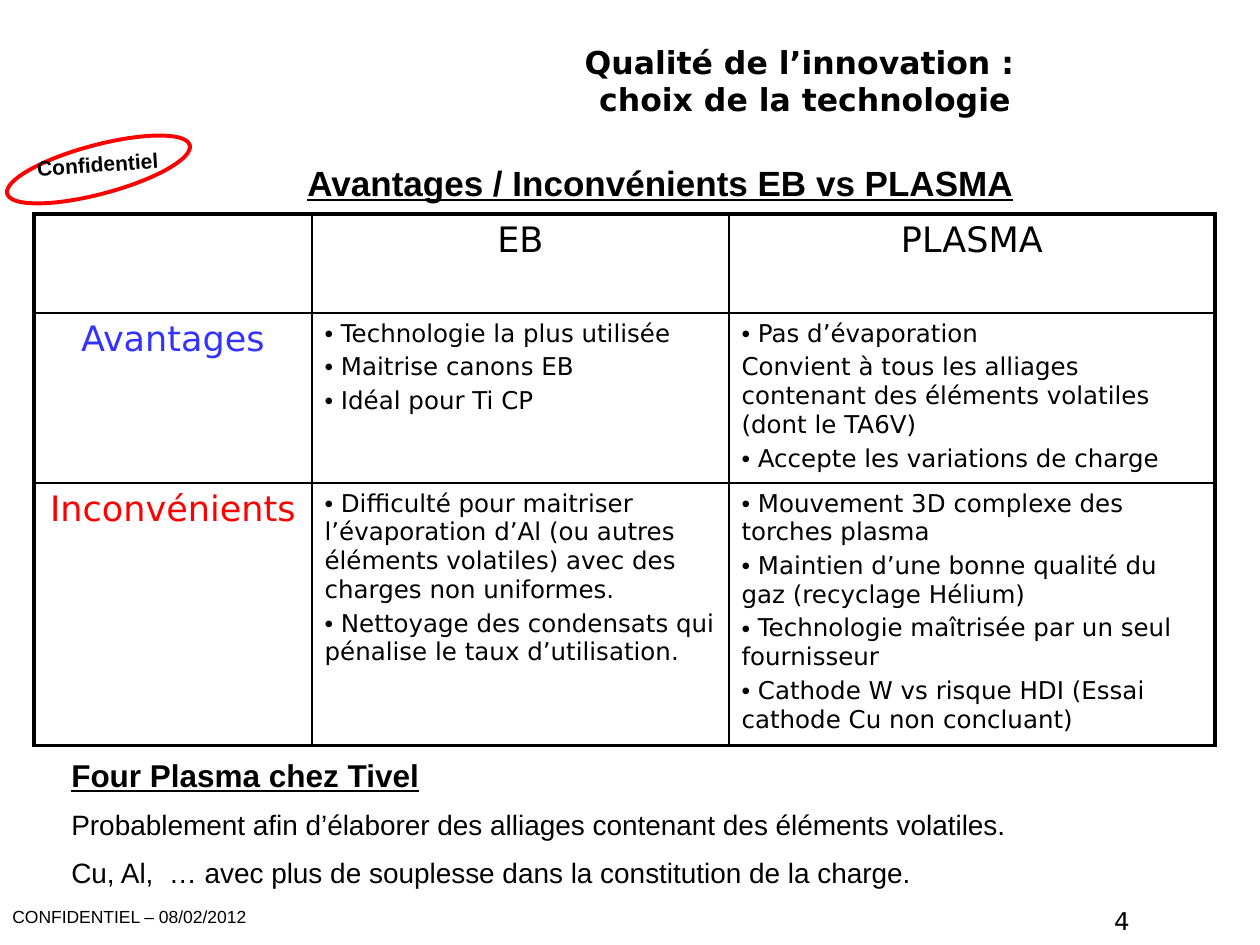
from lxml import etree
from pptx import Presentation
from pptx.dml.color import RGBColor
from pptx.enum import shapes, text
from pptx.oxml import ns
from pptx.util import Pt

PX = 914400 // 126
BLACK, RED, BLUE = "000000", "FF0000", "3333FF"
SANS, ARIAL = "DejaVu Sans", "Arial"
LEFT, CENTER, RIGHT = text.PP_ALIGN.LEFT, text.PP_ALIGN.CENTER, text.PP_ALIGN.RIGHT
THICK, THIN = 2.25, 1

TITLE = "Qualité de l’innovation : \vchoix de la technologie"
HEAD = dict(name=ARIAL, size=20, bold=True, underline=True)
SUBHEAD = dict(HEAD, size=18)
BODY = dict(name=ARIAL, size=16)
LABEL = dict(name=SANS, size=20)
ITEM = dict(name=SANS, size=14)

# box (left, top, width, height), rotation, alignment, [(text, format)]
BOXES = [
    ((0, 900, 600, 34), 0, LEFT,
     [("CONFIDENTIEL – 08/02/2012", dict(name=ARIAL, size=10))]),
    ((8, 145, 180, 47), -3.7, CENTER,
     [("Confidentiel", dict(name=ARIAL, size=12, bold=True))]),
    ((848, 900, 294, 66), 0, RIGHT, [("4", ITEM)]),
    ((164, 155, 993, 54), 0, CENTER,
     [("Avantages / Inconvénients EB vs PLASMA", HEAD)]),
    ((59, 750, 1201, 151), 0, LEFT, [
        ("Four Plasma chez Tivel", SUBHEAD),
        ("Probablement afin d’élaborer des alliages contenant des éléments volatiles.", BODY),
        ("Cu, Al,  … avec plus de souplesse dans la constitution de la charge.", BODY)]),
]

TABLE_AT = (34, 214)
COLS, ROWS = (278, 417, 486), (99, 170, 262)
COLUMN_HEADS = ("EB", "PLASMA")
ROW_HEADS = (("Avantages", BLUE), ("Inconvénients", RED))
# a leading • marks a bulleted paragraph
CELLS = [
    [["• Technologie la plus utilisée", "• Maitrise canons EB", "• Idéal pour Ti CP"],
     ["• Pas d’évaporation",
      "Convient à tous les alliages contenant des éléments volatiles (dont le TA6V)",
      "• Accepte les variations de charge"]],
    [["• Difficulté pour maitriser l’évaporation d’Al (ou autres éléments volatiles) "
      "avec des charges non uniformes.",
      "• Nettoyage des condensats qui pénalise le taux d’utilisation."],
     ["• Mouvement 3D complexe des torches plasma",
      "• Maintien d’une bonne qualité du gaz (recyclage Hélium)",
      "• Technologie maîtrisée par un seul fournisseur",
      "• Cathode W vs risque HDI (Essai cathode Cu non concluant)"]],
]


def rgb(value):
    return RGBColor.from_string(value)


def px(values):
    return [v * PX for v in values]


def style(r, fmt, color=BLACK):
    for key, value in fmt.items():
        setattr(r.font, key, Pt(value) if key == "size" else value)
    r.font.color.rgb = rgb(color)


def write(tf, lines, align=LEFT, gap=0, color=BLACK):
    for i, (line, fmt) in enumerate(lines):
        p = tf.add_paragraph() if i else tf.paragraphs[0]
        p.alignment = align
        p.space_before = Pt(gap if i else 0)
        if line.startswith("•"):
            pPr = p._p.get_or_add_pPr()
            pPr.set("marL", "0")
            pPr.set("indent", "0")
            etree.SubElement(pPr, ns.qn("a:buFont")).set("typeface", ARIAL)
            etree.SubElement(pPr, ns.qn("a:buChar")).set("char", "•")
            line = line[1:]
        r = p.add_run()
        r.text = line
        style(r, fmt, color)


def add_borders(cell, widths):
    """Draw the left, right, top and bottom lines, widths in points."""
    tcPr = cell._tc.get_or_add_tcPr()
    for side, width in zip("LRTB", widths):
        ln = etree.SubElement(tcPr, ns.qn(f"a:ln{side}"), w=str(int(Pt(width))))
        fill = etree.SubElement(ln, ns.qn("a:solidFill"))
        etree.SubElement(fill, ns.qn("a:srgbClr"), val=BLACK)


def add_title(s):
    sp = s.shapes.title
    sp.left, sp.top, sp.width, sp.height = px((372, 45, 866, 71))
    tf = sp.text_frame
    tf.text = TITLE
    tf.auto_size = text.MSO_AUTO_SIZE.NONE
    tf.vertical_anchor = text.MSO_ANCHOR.MIDDLE
    p = tf.paragraphs[0]
    p.alignment = CENTER
    for r in p.runs:
        style(r, dict(name=SANS, size=18, bold=True))


def add_stamp(s):
    sp = s.shapes.add_shape(shapes.MSO_SHAPE.OVAL, *px((4, 145, 189, 49)))
    sp.rotation = -14.9
    sp.shadow.inherit = False
    sp.fill.solid()
    sp.fill.fore_color.rgb = rgb("FFFFFF")
    sp.line.color.rgb = rgb(RED)
    sp.line.width = Pt(2.25)


def add_comparison(s):
    frame = s.shapes.add_table(len(ROWS), len(COLS), *px(TABLE_AT + (sum(COLS), sum(ROWS))))
    table = frame.table
    table.first_row = table.horz_banding = False
    for col, width in zip(table.columns, px(COLS)):
        col.width = width
    for row, height in zip(table.rows, px(ROWS)):
        row.height = height
    for i in range(len(ROWS)):
        for j in range(len(COLS)):
            edges = (j == 0, j == len(COLS) - 1, i == 0, i == len(ROWS) - 1)
            cell = table.cell(i, j)
            add_borders(cell, [THICK if edge else THIN for edge in edges])
            cell.fill.background()
    for j, name in enumerate(COLUMN_HEADS, 1):
        write(table.cell(0, j).text_frame, [(name, LABEL)], CENTER)
    for i, ((name, color), row) in enumerate(zip(ROW_HEADS, CELLS), 1):
        write(table.cell(i, 0).text_frame, [(name, LABEL)], CENTER, color=color)
        for j, lines in enumerate(row, 1):
            write(table.cell(i, j).text_frame, [(line, ITEM) for line in lines], gap=2.8)


def main():
    prs = Presentation()
    prs.slide_width, prs.slide_height = px((1260, 945))
    s = prs.slides.add_slide(prs.slide_layouts[5])
    add_title(s)
    add_stamp(s)
    for at, angle, align, lines in BOXES:
        sp = s.shapes.add_textbox(*px(at))
        sp.rotation = angle
        sp.text_frame.word_wrap = True
        write(sp.text_frame, lines, align, gap=8)
    add_comparison(s)
    prs.save("out.pptx")


if __name__ == "__main__":
    main()
